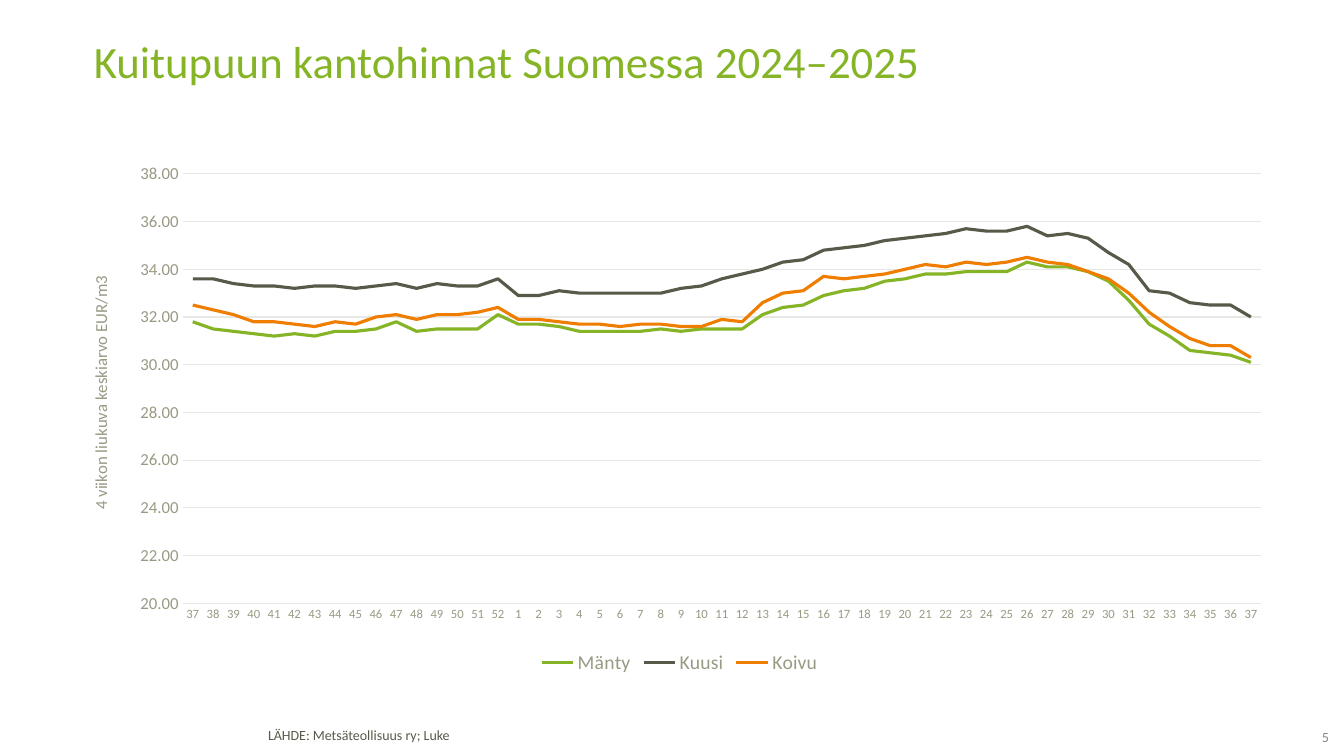
from dataclasses import dataclass

from lxml.etree import SubElement
from pptx import Presentation
from pptx.chart.data import CategoryChartData
from pptx.dml.color import RGBColor
from pptx.enum.chart import XL_CHART_TYPE, XL_LEGEND_POSITION, XL_TICK_MARK
from pptx.enum.text import MSO_ANCHOR, PP_ALIGN
from pptx.oxml.ns import qn
from pptx.util import Inches, Pt


@dataclass(frozen=True)
class Theme:
    """Colours, font and type sizes of the slide."""
    font: str = "Calibri"
    green: str = "85B526"
    dark: str = "59594A"
    orange: str = "EF7D00"
    label: str = "999984"
    grid: str = "E7E7E3"
    number: str = "878787"
    title_size: int = 32
    legend_size: int = 14
    value_size: int = 12
    small_size: int = 10
    week_size: int = 9


@dataclass(frozen=True)
class Series:
    """A named price line with its colour."""
    name: str
    color: str
    values: tuple[float, ...]


@dataclass(frozen=True)
class Label:
    """A line of text with its box, in inches, and its format."""
    text: str
    box: tuple[float, float, float, float]
    size: int
    color: str
    margins: tuple[float, float, float, float] = (0.1, 0.05, 0.1, 0.05)
    anchor: MSO_ANCHOR = MSO_ANCHOR.TOP
    align: PP_ALIGN = PP_ALIGN.LEFT
    spacing: float = 1.0


THEME = Theme()
WEEKS = [*range(37, 53), *range(1, 38)]
SERIES = (
    Series("Mänty", THEME.green, (
        31.8, 31.5, 31.4, 31.3, 31.2, 31.3, 31.2, 31.4, 31.4, 31.5, 31.8, 31.4, 31.5, 31.5,
        31.5, 32.1, 31.7, 31.7, 31.6, 31.4, 31.4, 31.4, 31.4, 31.5, 31.4, 31.5, 31.5, 31.5,
        32.1, 32.4, 32.5, 32.9, 33.1, 33.2, 33.5, 33.6, 33.8, 33.8, 33.9, 33.9, 33.9, 34.3,
        34.1, 34.1, 33.9, 33.5, 32.7, 31.7, 31.2, 30.6, 30.5, 30.4, 30.1)),
    Series("Kuusi", THEME.dark, (
        33.6, 33.6, 33.4, 33.3, 33.3, 33.2, 33.3, 33.3, 33.2, 33.3, 33.4, 33.2, 33.4, 33.3,
        33.3, 33.6, 32.9, 32.9, 33.1, 33, 33, 33, 33, 33, 33.2, 33.3, 33.6, 33.8,
        34, 34.3, 34.4, 34.8, 34.9, 35, 35.2, 35.3, 35.4, 35.5, 35.7, 35.6, 35.6, 35.8,
        35.4, 35.5, 35.3, 34.7, 34.2, 33.1, 33, 32.6, 32.5, 32.5, 32)),
    Series("Koivu", THEME.orange, (
        32.5, 32.3, 32.1, 31.8, 31.8, 31.7, 31.6, 31.8, 31.7, 32, 32.1, 31.9, 32.1, 32.1,
        32.2, 32.4, 31.9, 31.9, 31.8, 31.7, 31.7, 31.6, 31.7, 31.7, 31.6, 31.6, 31.9, 31.8,
        32.6, 33, 33.1, 33.7, 33.6, 33.7, 33.8, 34, 34.2, 34.1, 34.3, 34.2, 34.3, 34.5,
        34.3, 34.2, 33.9, 33.6, 33, 32.2, 31.6, 31.1, 30.8, 30.8, 30.3)),
)
TITLE = Label("Kuitupuun kantohinnat Suomessa 2024–2025", (0.83, 0.39, 11.69, 0.98),
              THEME.title_size, THEME.green, spacing=0.8)
LABELS = (
    Label("LÄHDE: Metsäteollisuus ry; Luke", (2.56, 7.18, 7.18, 0.27),
          THEME.small_size, THEME.dark, spacing=0.85),
    Label("5", (12.65, 7.24, 0.53, 0.19), THEME.small_size, THEME.number,
          (0, 0, 0, 0.04), MSO_ANCHOR.MIDDLE, PP_ALIGN.RIGHT),
)


def set_all(target, formats: dict) -> None:
    """Set every attribute named in formats."""
    for name, value in formats.items():
        setattr(target, name, value)


def set_font(font, size: int, color: str) -> None:
    """Give a font the theme typeface, a size and a colour."""
    set_all(font, {"name": THEME.font, "size": Pt(size), "bold": False})
    font.color.rgb = RGBColor.from_string(color)


def set_line(line, color: str, width: float) -> None:
    """Give a line a colour and a width."""
    line.color.rgb = RGBColor.from_string(color)
    line.width = Pt(width)


def write_label(sp, label: Label) -> None:
    """Place a text shape and fill it with its label."""
    sides = ("left", "top", "width", "height")
    set_all(sp, dict(zip(sides, map(Inches, label.box))))
    tf = sp.text_frame
    edges = ("margin_left", "margin_top", "margin_right", "margin_bottom")
    set_all(tf, dict(zip(edges, map(Inches, label.margins))))
    set_all(tf, {"word_wrap": True, "vertical_anchor": label.anchor})
    p = tf.paragraphs[0]
    set_all(p, {"alignment": label.align, "line_spacing": label.spacing})
    r = p.add_run()
    r.text = label.text
    set_font(r.font, label.size, label.color)


def set_plot_layout(chart, x: float, y: float, w: float, h: float) -> None:
    """Fix the inner plot area as fractions of the chart."""
    area = chart.plots[0]._element.getparent()
    for old in area.findall(qn("c:layout")):
        area.remove(old)
    layout = SubElement(area, qn("c:layout"))
    area.insert(0, layout)
    manual = SubElement(layout, qn("c:manualLayout"))
    parts = {"layoutTarget": "inner", "xMode": "edge", "yMode": "edge",
             "x": x, "y": y, "w": w, "h": h}
    for tag, value in parts.items():
        SubElement(manual, qn(f"c:{tag}")).set("val", str(value))


def format_axes(chart) -> None:
    """Format the week axis and the price axis."""
    weeks, prices = chart.category_axis, chart.value_axis
    for axis, size in ((weeks, THEME.week_size), (prices, THEME.value_size)):
        set_all(axis, {"major_tick_mark": XL_TICK_MARK.NONE,
                       "minor_tick_mark": XL_TICK_MARK.NONE})
        set_font(axis.tick_labels.font, size, THEME.label)
    set_line(weeks.format.line, THEME.grid, 0.75)
    set_all(prices, {"minimum_scale": 20, "maximum_scale": 38, "major_unit": 2,
                     "has_major_gridlines": True})
    set_all(prices.tick_labels, {"number_format": "#,##0.00",
                                 "number_format_is_linked": False})
    set_line(prices.major_gridlines.format.line, THEME.grid, 0.75)
    prices.format.line.fill.background()
    p = prices.axis_title.text_frame.paragraphs[0]
    r = p.add_run()
    r.text = "4 viikon liukuva keskiarvo EUR/m3"
    set_font(r.font, THEME.value_size, THEME.label)


def add_price_chart(s) -> None:
    """Add the line chart of weekly stumpage prices."""
    data = CategoryChartData(number_format="#,##0.00")
    data.categories = [str(week) for week in WEEKS]
    for series in SERIES:
        data.add_series(series.name, series.values)
    box = map(Inches, (0.83, 1.57, 11.82, 5.16))
    chart = s.shapes.add_chart(XL_CHART_TYPE.LINE, *box, data).chart
    set_font(chart.font, THEME.small_size, THEME.dark)
    set_all(chart, {"has_title": False, "has_legend": True})
    set_all(chart.legend, {"position": XL_LEGEND_POSITION.BOTTOM,
                           "include_in_layout": False})
    set_font(chart.legend.font, THEME.legend_size, THEME.label)
    chart.plots[0].vary_by_categories = False
    for line, series in zip(chart.plots[0].series, SERIES):
        line.smooth = False
        set_line(line.format.line, series.color, 2.25)
    format_axes(chart)
    set_plot_layout(chart, 0.083, 0.03, 0.905, 0.826)


def main() -> None:
    """Build the slide and save it."""
    prs = Presentation()
    set_all(prs, {"slide_width": Inches(13.33), "slide_height": Inches(7.5)})
    s = prs.slides.add_slide(prs.slide_layouts[5])
    write_label(s.shapes.title, TITLE)
    for label in LABELS:
        write_label(s.shapes.add_textbox(*map(Inches, label.box)), label)
    add_price_chart(s)
    prs.save("out.pptx")


if __name__ == "__main__":
    main()
